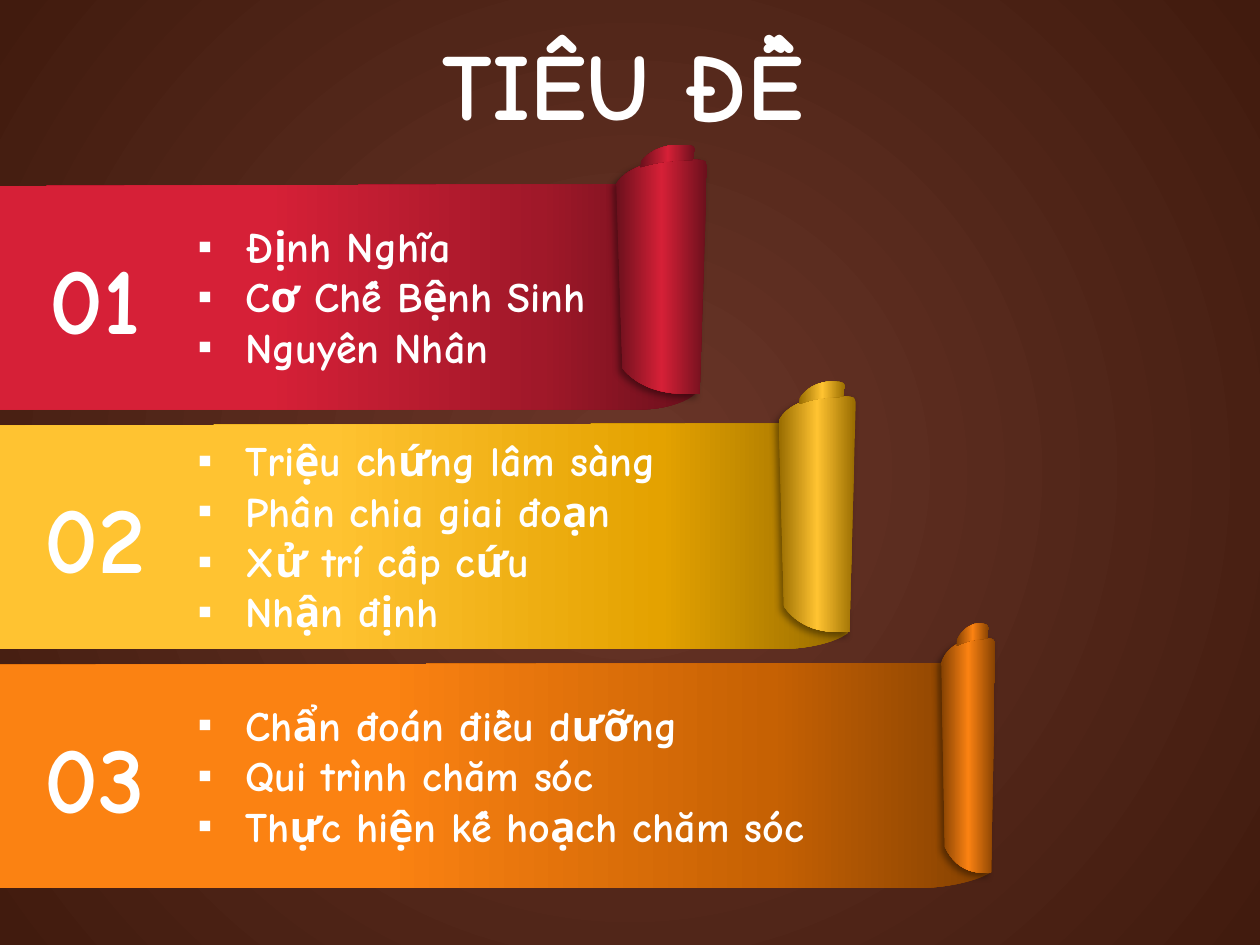
"""Build a title slide with three curled ribbons, each holding a numbered list."""
from dataclasses import dataclass

from lxml.etree import SubElement
from pptx import Presentation
from pptx.dml.color import RGBColor
from pptx.enum.text import MSO_ANCHOR, MSO_AUTO_SIZE, PP_ALIGN
from pptx.oxml.ns import qn
from pptx.util import Inches, Pt


@dataclass(frozen=True)
class Theme:
    font: str = "Comic Neue"
    text: str = "FFFFFF"
    shadow: str = "000000"
    background: tuple = ("6A3629", "411B0E")
    red: tuple = ("6B101C", "A01829", "D62037")
    yellow: tuple = ("986C00", "E4A200", "FFC331")
    orange: tuple = ("844102", "C66103", "FB8212")
    display_size: int = 54
    list_size: int = 24


theme = Theme()


def set_stops(element, stops):
    gradient = next(element.iter(qn("a:gradFill")))
    stop_list = gradient.find(qn("a:gsLst"))
    for stop in list(stop_list):
        stop_list.remove(stop)
    for position, color in stops:
        stop = SubElement(stop_list, qn("a:gs"), pos=str(position * 1000))
        SubElement(stop, qn("a:srgbClr"), val=color)
    return gradient


def add_text(text, left, top, width, height, size=theme.display_size, bullets=False):
    box = slide.shapes.add_textbox(Inches(left), Inches(top), Inches(width), Inches(height))
    frame = box.text_frame
    frame.text = text
    frame.word_wrap = bullets
    frame.auto_size = MSO_AUTO_SIZE.SHAPE_TO_FIT_TEXT
    frame.vertical_anchor = MSO_ANCHOR.MIDDLE
    for paragraph in frame.paragraphs:
        paragraph.alignment = PP_ALIGN.LEFT if bullets else PP_ALIGN.CENTER
        font = paragraph.runs[0].font
        font.name = theme.font
        font.size = Pt(size)
        font.bold = True
        font.color.rgb = RGBColor.from_string(theme.text)
        if bullets:
            properties = paragraph._p.get_or_add_pPr()
            properties.set("marL", str(Inches(0.38)))
            properties.set("indent", str(-Inches(0.38)))
            SubElement(properties, qn("a:buFont"), typeface="Arial")
            SubElement(properties, qn("a:buChar"), char="▪")


presentation = Presentation()
presentation.slide_width = Inches(10)
presentation.slide_height = Inches(7.5)
slide = presentation.slides.add_slide(presentation.slide_layouts[6])

slide.background.fill.gradient()
backdrop = set_stops(slide.element, zip((0, 100), theme.background))
backdrop.remove(backdrop.find(qn("a:lin")))
radial = SubElement(backdrop, qn("a:path"), path="circle")
SubElement(radial, qn("a:fillToRect"), l="50000", t="50000", r="50000", b="50000")

add_text("TIÊU ĐỀ", 3.17, 0.15, 3.55, 1.01)

band_outline = [
    [(0, 0.01)], [(0, 1)], [(0.92, 1)],
    [(0.96, 1), (0.99, 0.96), (1, 0.93)],
    [(1, 0.62), (0.99, 0.31), (0.99, 0)],
    [(0, 0.01)],
]
curl_outline = [
    [(0.92, 1)],
    [(0.68, 1), (0.31, 1), (0.07, 0.89)],
    [(0, 0.1)],
    [(0.17, 0), (0.67, -0.01), (0.93, 0)],
    [(1.04, 0), (0.99, 0.04), (1, 0.06)],
    [(0.92, 1)],
]
tip_outline = [
    [(0, 1)], [(0.02, 0.72)],
    [(0.25, 0), (0.68, -0.06), (0.82, 0)],
    [(0.91, 0), (0.98, 0.06), (1, 0.17)],
    [(0.95, 0.67)],
    [(0.7, 0.67), (0.32, 0.72), (0, 1)],
]

ribbons = [
    (theme.red, (-0.06, 1.46, 5.58, 1.79), (4.89, 1.27, 0.72, 1.86), (5.08, 1.15, 0.44, 0.18)),
    (theme.yellow, (-0.02, 3.36, 6.75, 1.79), (6.18, 3.15, 0.61, 1.87), (6.34, 3.03, 0.37, 0.18)),
    (theme.orange, (-0.02, 5.26, 7.88, 1.79), (7.47, 5.07, 0.43, 1.86), (7.59, 4.95, 0.26, 0.18)),
]
lists = [
    (3.42, ["Định Nghĩa", "Cơ Chế Bệnh Sinh", "Nguyên Nhân"]),
    (4.46, ["Triệu chứng lâm sàng", "Phân chia giai đoạn", "Xử trí cấp cứu", "Nhận định"]),
    (5.32, ["Chẩn đoán điều dưỡng", "Qui trình chăm sóc", "Thực hiện kế hoạch chăm sóc"]),
]
first_top = 1.46
pitch = 1.9

for (dark, middle, bright), band, curl, tip in ribbons:
    band_stops = [(0, dark), (22, middle), (61, bright)]
    curl_stops = [(0, dark), (50, bright), (100, dark)]
    group = slide.shapes.add_group_shape()
    pieces = [
        (slide.shapes, band_outline, band, band_stops),
        (group.shapes, curl_outline, curl, curl_stops),
        (group.shapes, tip_outline, tip, curl_stops),
    ]
    for shapes, outline, (left, top, width, height), stops in pieces:
        vertices = [
            (Inches(left + x * width), Inches(top + y * height))
            for x, y in (segment[-1] for segment in outline)
        ]
        builder = shapes.build_freeform(*vertices[0])
        builder.add_line_segments(vertices[1:], close=True)
        shape = builder.convert_to_shape()
        lines = list(shape.element.iter(qn("a:lnTo")))
        for line, segment in zip(lines, outline[1:]):
            if len(segment) == 3:
                line.tag = qn("a:cubicBezTo")
                end = line[0]
                for x, y in segment[:2]:
                    control = SubElement(line, qn("a:pt"))
                    control.set("x", str(Inches(x * width)))
                    control.set("y", str(Inches(y * height)))
                line.append(end)
        shape.line.fill.background()
        shape.fill.gradient()
        shape.fill.gradient_angle = 180
        set_stops(shape.element, stops)
        shape.shadow.inherit = False
        if outline is curl_outline:
            effects = shape.element.spPr.find(qn("a:effectLst"))
            shadow = SubElement(
                effects, qn("a:outerShdw"), blurRad=str(Pt(4)), dist=str(Pt(3)),
                dir=str(135 * 60000), algn="tr", rotWithShape="0",
            )
            color = SubElement(shadow, qn("a:srgbClr"), val=theme.shadow)
            SubElement(color, qn("a:alpha"), val="40000")
    slide.shapes.element.append(group.element)

for index in range(len(lists)):
    add_text(f"{index + 1:02}", 0.19, first_top + pitch * index + 0.39, 1.13, 1.01)

for index, (width, items) in enumerate(lists):
    height = 0.11 + 0.4 * len(items)
    middle = first_top + pitch * index + 0.89
    add_text("\n".join(items), 1.47, middle - height / 2, width, height,
             size=theme.list_size, bullets=True)

presentation.save("out.pptx")
